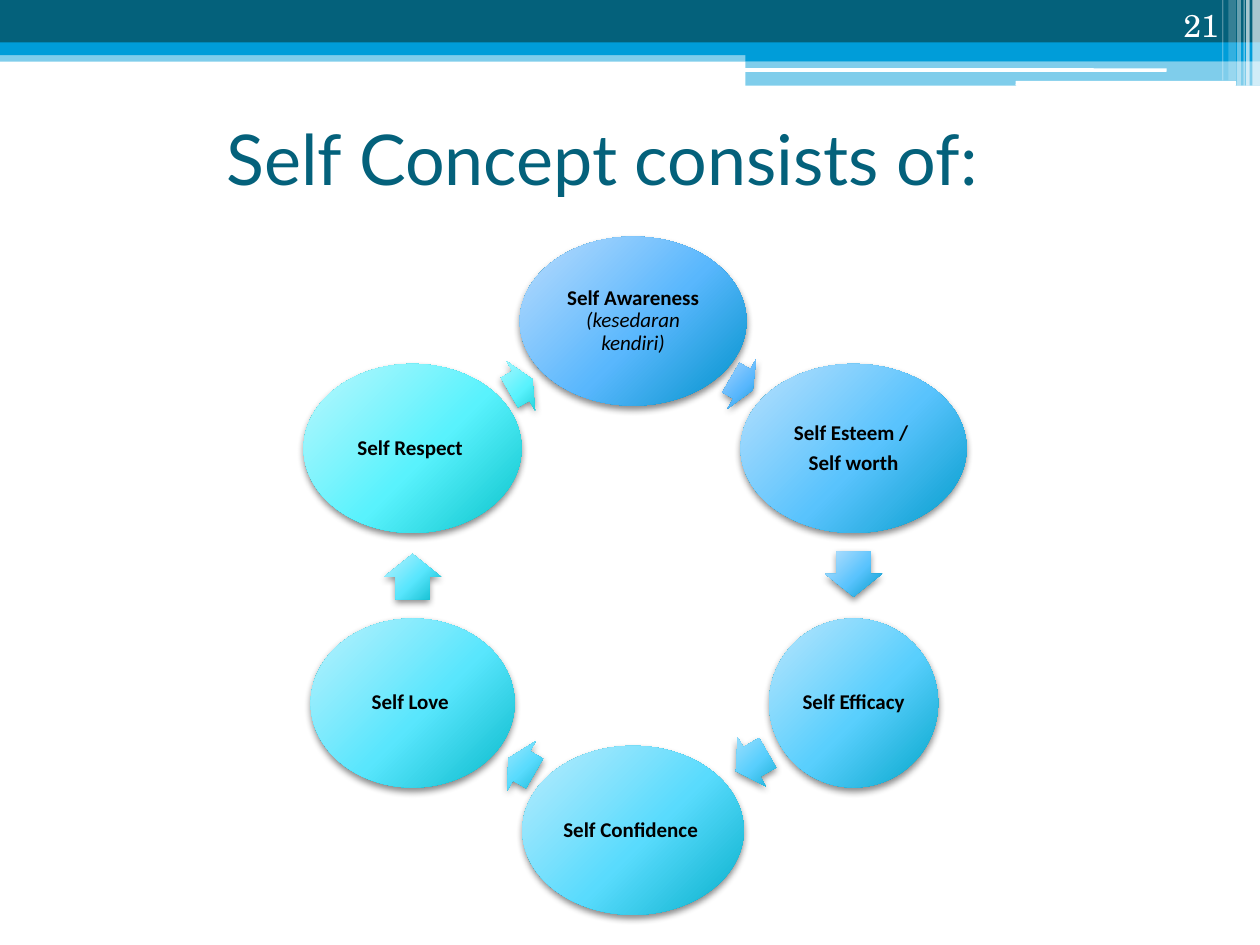
from dataclasses import dataclass
from math import cos, radians, sin

from pptx import Presentation
from pptx.dml.color import RGBColor
from pptx.enum.shapes import MSO_SHAPE
from pptx.enum.text import MSO_ANCHOR, PP_ALIGN
from pptx.oxml import parse_xml
from pptx.oxml.ns import nsdecls, qn
from pptx.util import Pt

RECT, ROUND_RECT = MSO_SHAPE.RECTANGLE, MSO_SHAPE.ROUNDED_RECTANGLE
ELLIPSE, ARROW = MSO_SHAPE.OVAL, MSO_SHAPE.RIGHT_ARROW
MIDDLE, BOTTOM = MSO_ANCHOR.MIDDLE, MSO_ANCHOR.BOTTOM
CENTER, RIGHT = PP_ALIGN.CENTER, PP_ALIGN.RIGHT

COLORS = {"teal": "04617B", "blue": "009DD9", "white": "FFFFFF", "black": "000000"}
TITLE_FONT = {"name": "Lato", "size": Pt(40)}
NUMBER_FONT = {"name": "TeX Gyre Schola", "size": Pt(18)}
BOLD_LABEL = {"name": "Calibri", "size": Pt(12), "bold": True}
ITALIC_LABEL = {"name": "Calibri", "size": Pt(12), "italic": True}
LABEL_FRAME = {"word_wrap": True, "vertical_anchor": MIDDLE}
LABEL_FRAME |= {f"margin_{side}": Pt(1.4) for side in ("left", "top", "right", "bottom")}
LABEL_PARAGRAPH = {"alignment": CENTER, "line_spacing": 0.9, "space_after": Pt(4.2)}

RING_X, RING_Y, RING_RADIUS = 361.8, 329, 145.5
ELLIPSE_HEIGHT, ARROW_HEIGHT = 96.6, 32.4


@dataclass(frozen=True)
class Band:
    left: float
    top: float
    width: float
    height: float
    color: str = "white"
    opacity: int = 100
    kind: MSO_SHAPE = RECT


@dataclass(frozen=True)
class Stage:
    """One part of the cycle, with the arrow leading to the next part."""
    lines: tuple[str, ...]
    width: float
    gradient: tuple[str, str, str]
    arrow_width: float
    arrow_shift: float
    translation: str = ""


BANDS = (
    Band(0, 28.8, 720, 6.5, "blue", 50),
    Band(0, 0, 720, 24.5, "teal"),
    Band(0, 24.3, 720, 7.2, "blue"),
    Band(426, 28, 294, 7, "blue"),
    Band(426, 34.8, 294, 14.2, "blue", 50),
    Band(425.5, 39, 241.2, 2, kind=ROUND_RECT),
    Band(580.3, 46.2, 126, 2.8, kind=ROUND_RECT),
    Band(715.7, 0, 4.3, 49, opacity=65),
    Band(712.1, 0, 2.1, 49, opacity=65),
    Band(710.6, 0, 0.7, 49, opacity=60),
    Band(707, 0, 2.1, 49, opacity=40),
    Band(702, 0, 4.3, 46, opacity=20),
    Band(698.4, 0, 0.7, 46, opacity=30),
)

STAGES = (
    Stage(("Self Awareness ",), 129.6, ("BBDCFD", "59B7FD", "0092CA"), 14.4, -1,
          "(kesedaran kendiri)"),
    Stage(("Self Esteem / ", "Self worth"), 129.2, ("BBE1FD", "59C3FD", "029CCA"), 25.9, -1),
    Stage(("Self Efficacy",), 96.6, ("BBE6FD", "59CFFD", "04A6CA"), 20.9, -5.5),
    Stage(("Self Confidence ",), 126.6, ("BBECFD", "59DBFD", "06AFCA"), 17.3, 1),
    Stage(("Self Love ",), 116.6, ("BBF1FD", "59E6FD", "08B9CA"), 25.9, -0.5),
    Stage(("Self Respect ",), 124.6, ("BBF7FD", "59F2FD", "0AC2CA"), 15.1, -1.3),
)


def apply(target, values: dict) -> None:
    for name, value in values.items():
        setattr(target, name, value)


def add_run(paragraph, text: str, font: dict, color: str) -> None:
    run = paragraph.add_run()
    run.text = text
    apply(run.font, font)
    run.font.color.rgb = RGBColor.from_string(COLORS[color])


def draw_band(shapes, band: Band) -> None:
    shape = shapes.add_shape(band.kind, Pt(band.left), Pt(band.top),
                             Pt(band.width), Pt(band.height))
    shape.shadow.inherit = False
    shape.line.fill.background()
    shape.fill.solid()
    shape.fill.fore_color.rgb = RGBColor.from_string(COLORS[band.color])
    if band.opacity < 100:
        color = shape.element.spPr.find(".//" + qn("a:srgbClr"))
        color.append(parse_xml(f'<a:alpha {nsdecls("a")} val="{band.opacity * 1000}"/>'))


def add_glossy_shape(shapes, kind: MSO_SHAPE, x: float, y: float, width: float,
                     height: float, gradient: tuple[str, str, str]):
    """Add a shape centred on x, y with a radial gradient and a soft shadow."""
    shape = shapes.add_shape(kind, Pt(x - width / 2), Pt(y - height / 2),
                             Pt(width), Pt(height))
    shape.line.fill.background()
    shape.shadow.inherit = False
    shape.fill.gradient()
    stops = "".join(f'<a:gs pos="{position}"><a:srgbClr val="{color}"/></a:gs>'
                    for position, color in zip((0, 55000, 100000), gradient))
    properties = shape.element.spPr
    properties.replace(properties.find(qn("a:gradFill")), parse_xml(
        f'<a:gradFill {nsdecls("a")} rotWithShape="1"><a:gsLst>{stops}</a:gsLst>'
        '<a:path path="circle"><a:fillToRect l="-40000" t="-90000" r="140000" b="190000"/>'
        '</a:path></a:gradFill>'))
    properties.find(qn("a:effectLst")).append(parse_xml(
        f'<a:outerShdw {nsdecls("a")} blurRad="{Pt(4)}" dist="{Pt(2)}" dir="5400000" '
        f'rotWithShape="0"><a:srgbClr val="{COLORS["black"]}"><a:alpha val="45000"/>'
        '</a:srgbClr></a:outerShdw>'))
    return shape


def draw_stage(shapes, stage: Stage, index: int) -> None:
    angle = radians(60 * index - 90)
    ellipse = add_glossy_shape(shapes, ELLIPSE, RING_X + RING_RADIUS * cos(angle),
                               RING_Y + RING_RADIUS * sin(angle),
                               stage.width, ELLIPSE_HEIGHT, stage.gradient)
    frame = ellipse.text_frame
    apply(frame, LABEL_FRAME)
    for number, line in enumerate(stage.lines):
        paragraph = frame.add_paragraph() if number else frame.paragraphs[0]
        apply(paragraph, LABEL_PARAGRAPH)
        add_run(paragraph, line, BOLD_LABEL, "black")
    if stage.translation:
        add_run(paragraph, stage.translation, ITALIC_LABEL, "black")

    heading = 60 * index + 30
    direction, middle = radians(heading), radians(heading - 90)
    chord_distance = RING_RADIUS * cos(radians(30))
    arrow = add_glossy_shape(
        shapes, ARROW,
        RING_X + chord_distance * cos(middle) + stage.arrow_shift * cos(direction),
        RING_Y + chord_distance * sin(middle) + stage.arrow_shift * sin(direction),
        stage.arrow_width, ARROW_HEIGHT, stage.gradient)
    arrow.rotation = heading
    arrow.adjustments[0], arrow.adjustments[1] = 0.6, 0.5


def main() -> None:
    presentation = Presentation()
    apply(presentation, {"slide_width": Pt(720), "slide_height": Pt(540)})
    slide = presentation.slides.add_slide(presentation.slide_layouts[5])
    shapes = slide.shapes
    for band in BANDS:
        draw_band(shapes, band)

    title = shapes.title
    apply(title, {"left": Pt(56.2), "top": Pt(62), "width": Pt(576), "height": Pt(56.2)})
    title.text_frame.vertical_anchor = MIDDLE
    heading = title.text_frame.paragraphs[0]
    heading.alignment = CENTER
    add_run(heading, "Self Concept consists of:", TITLE_FONT, "teal")

    page_number = shapes.add_textbox(Pt(643.7), Pt(0), Pt(59.8), Pt(28.8)).text_frame
    apply(page_number, {"word_wrap": True, "vertical_anchor": BOTTOM})
    page_number.paragraphs[0].alignment = RIGHT
    add_run(page_number.paragraphs[0], "21", NUMBER_FONT, "white")

    for index, stage in enumerate(STAGES):
        draw_stage(shapes, stage, index)
    presentation.save("out.pptx")


if __name__ == "__main__":
    main()
